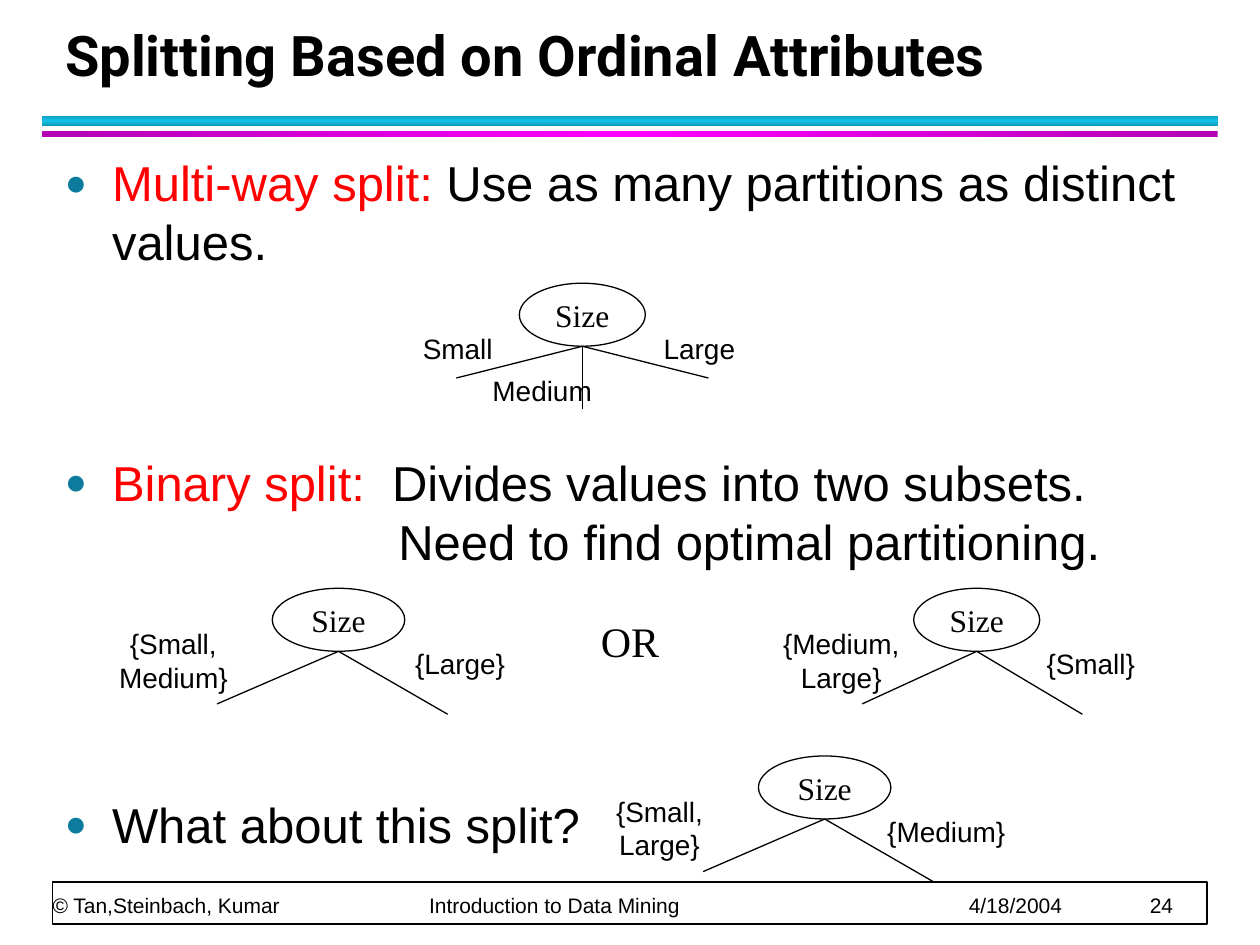
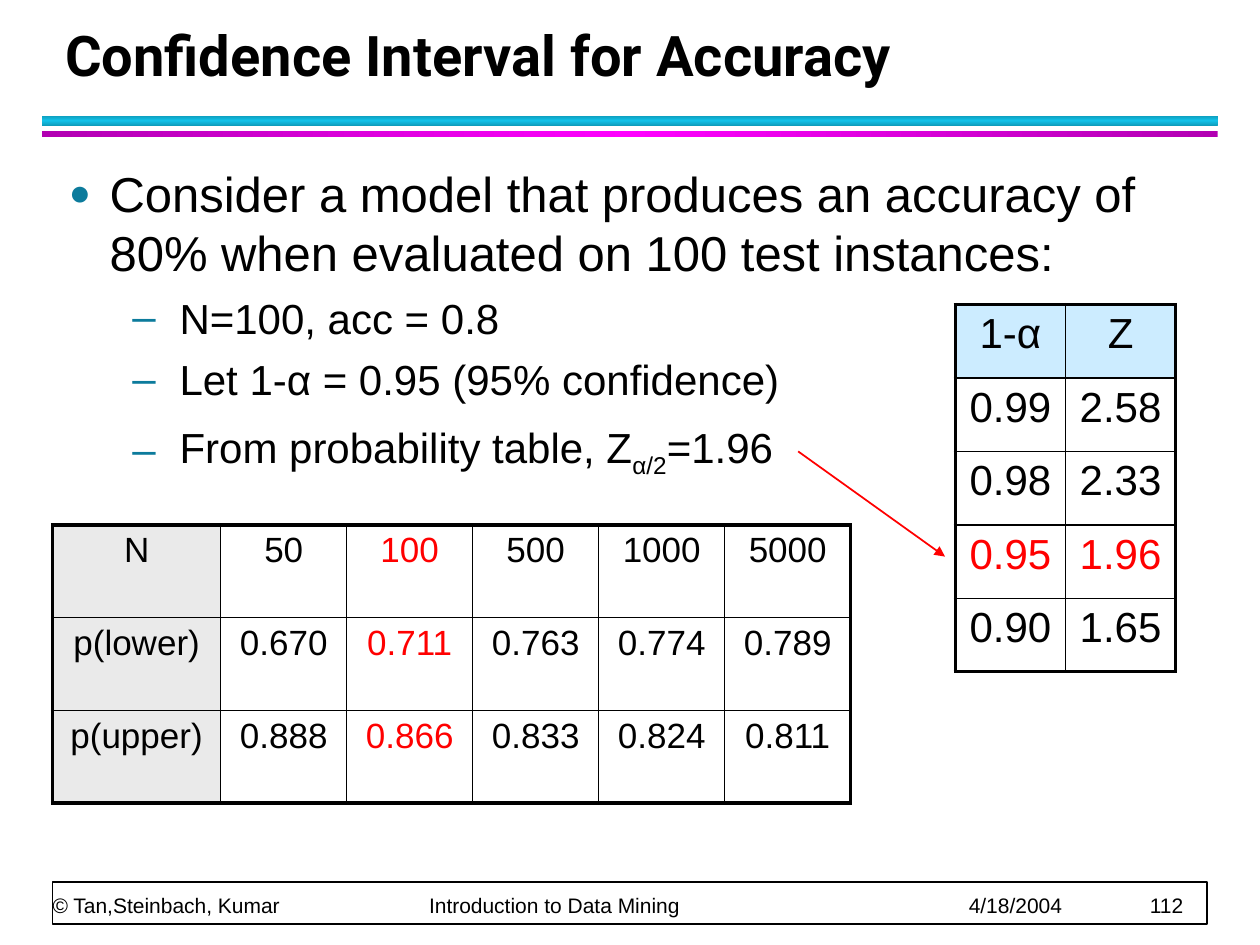
from copy import deepcopy
from dataclasses import dataclass

from pptx import Presentation
from pptx.dml.color import RGBColor as Rgb
from pptx.enum.shapes import MSO_CONNECTOR as Link, MSO_SHAPE as Preset
from pptx.enum.text import MSO_ANCHOR as Anchor, MSO_AUTO_SIZE as AutoSize, PP_ALIGN as Align
from pptx.oxml.ns import qn
from pptx.util import Cm, Pt
from lxml.etree import SubElement


@dataclass(frozen=True)
class Theme:
    ink: str = "000000"
    paper: str = "FFFFFF"
    accent: str = "FF0000"
    bullet: str = "0C7B9C"
    cyan: tuple = ("0E9BBA", "12C2E9", "0E9BBA")
    magenta: tuple = ("B200B2", "FF00FF", "B200B2")
    head_row: str = "CCECFF"
    head_column: str = "EAEAEA"
    sans: str = "Arial"
    serif: str = "Times New Roman"
    display: str = "Roboto"
    title: int = 32
    body: int = 28
    detail: int = 24
    grid: int = 20
    root: int = 18
    label: int = 16
    footer: int = 12
    hairline: float = 0.75
    rule: float = 1
    border: float = 2.25


THEME = Theme()
NO_INSETS = dict.fromkeys(("margin_left", "margin_top", "margin_right", "margin_bottom"), 0)

FOOTER_TABS = (7.59, 18.47, 22.12)
FOOTER_PARTS = ("© Tan,Steinbach, Kumar", "Introduction to Data Mining", "4/18/2004")

MULTI_WAY = ((-2.54, 0.64, -2.51, 0.05), (0, 1.27, -0.81, 0.89), (2.54, 0.64, 2.36, 0.05))
BINARY_WIDE = ((-2.45, 1.06, -3.33, 0.18), (2.2, 1.27, 2.45, 0.24))
BINARY_NARROW = ((-2.31, 1.06, -2.73, 0.18), (2.13, 1.27, 2.3, 0.24))

SIZE_TREES = (
    ((10.47, 5.71, 2.54), MULTI_WAY, ("Small", "Medium", "Large")),
    ((18.42, 11.86, 2.54), BINARY_NARROW, ("{Medium, Large}", "{Small}")),
    ((5.49, 11.86, 2.67), BINARY_WIDE, ("{Small, Medium}", "{Large}")),
    ((15.29, 15.24, 2.67), BINARY_WIDE, ("{Small, Large}", "{Medium}")),
)

Z_VALUES = (("1-α", "Z"), ("0.99", "2.58"), ("0.98", "2.33"), ("0.95", "1.96"), ("0.90", "1.65"))
BOUNDS = (
    ("N", "50", "100", "500", "1000", "5000"),
    ("p(lower)", "0.670", "0.711", "0.763", "0.774", "0.789"),
    ("p(upper)", "0.888", "0.866", "0.833", "0.824", "0.811"),
)


def apply(target, formats):
    for name, value in formats.items():
        setattr(target, name, value)


def cm(*lengths):
    return [Cm(length) for length in lengths]


def write(paragraph, words, size, colour=THEME.ink, face=THEME.sans, bold=False):
    run = paragraph.add_run()
    run.text = words
    apply(run.font, {"size": Pt(size), "name": face, "bold": bold})
    run.font.color.rgb = Rgb.from_string(colour)
    return run


def add_preset(slide, preset, box):
    shape = slide.shapes.add_shape(preset, *cm(*box))
    shape.shadow.inherit = False
    return shape


def add_outlined(slide, preset, box, width):
    shape = add_preset(slide, preset, box)
    shape.fill.solid()
    shape.fill.fore_color.rgb = Rgb.from_string(THEME.paper)
    shape.line.color.rgb = Rgb.from_string(THEME.ink)
    shape.line.width = Pt(width)
    return shape


def add_line(slide, start, end, colour, width, arrow=False):
    line = slide.shapes.add_connector(Link.STRAIGHT, *cm(*start, *end))
    line.line.color.rgb = Rgb.from_string(colour)
    line.line.width = Pt(width)
    if arrow:
        SubElement(line.line._get_or_add_ln(), qn("a:tailEnd"), type="triangle")
    SubElement(line._element.spPr, qn("a:effectLst"))


def add_centred(slide, centre, box_size, words, size, face):
    (x, y), (width, height) = centre, box_size
    caption = slide.shapes.add_textbox(*cm(x - width / 2, y - height / 2, width, height))
    apply(caption.text_frame, NO_INSETS | {"word_wrap": True, "vertical_anchor": Anchor.MIDDLE})
    paragraph = caption.text_frame.paragraphs[0]
    paragraph.alignment = Align.CENTER
    write(paragraph, words, size, face=face)


def add_band(slide, box, colours, angle):
    band = add_preset(slide, Preset.RECTANGLE, box)
    band.line.fill.background()
    band.fill.gradient()
    band.fill.gradient_angle = angle
    stops = band._element.spPr.find(".//" + qn("a:gsLst"))
    stops.append(deepcopy(stops[0]))
    for index, (stop, colour) in enumerate(zip(band.fill.gradient_stops, colours)):
        stop.color.rgb = Rgb.from_string(colour)
        stop.position = index / 2


def add_footer(slide, box, number):
    frame = add_outlined(slide, Preset.RECTANGLE, box, THEME.rule)
    apply(frame.text_frame, NO_INSETS | {"margin_bottom": Cm(0.13), "vertical_anchor": Anchor.BOTTOM})
    paragraph = frame.text_frame.paragraphs[0]
    apply(paragraph, {"alignment": Align.LEFT, "line_spacing": Pt(20)})
    tabs = SubElement(paragraph._p.get_or_add_pPr(), qn("a:tabLst"))
    for position in FOOTER_TABS:
        SubElement(tabs, qn("a:tab"), pos=str(Cm(position)), algn="l")
    write(paragraph, "\t".join((*FOOTER_PARTS, number)), THEME.footer)


def start_slide(deck, heading, number):
    slide = deck.slides.add_slide(deck.slide_layouts[5])
    title = slide.shapes.title
    apply(title, dict(zip(("left", "top", "width", "height"), cm(1.06, 0.42, 23.02, 1.48))))
    apply(title.text_frame, {"vertical_anchor": Anchor.BOTTOM, "auto_size": AutoSize.NONE})
    paragraph = title.text_frame.paragraphs[0]
    apply(paragraph, {"alignment": Align.LEFT, "line_spacing": Pt(36)})
    write(paragraph, heading, THEME.title, face=THEME.display, bold=True)
    add_band(slide, (0.85, 2.33, 23.7, 0.21), THEME.cyan, 90)
    add_band(slide, (0.85, 2.65, 23.7, 0.11), THEME.magenta, 0)
    add_footer(slide, (1.06, 17.78, 23.28, 0.85), number)
    return slide


def add_body(slide, box):
    body = slide.shapes.add_textbox(*cm(*box)).text_frame
    body.word_wrap = True
    return body


def add_item(body, parts, size, margin, hang=0.0, mark=None, scale=100, before=None, after=4):
    paragraph = body.paragraphs[0]
    if paragraph.runs:
        paragraph = body.add_paragraph()
    before = size / 10 if before is None else before
    apply(paragraph, {"space_before": Pt(before), "space_after": Pt(after)})
    props = paragraph._p.get_or_add_pPr()
    props.set("marL", str(Cm(margin)))
    props.set("indent", str(-Cm(hang)))
    if mark:
        SubElement(SubElement(props, qn("a:buClr")), qn("a:srgbClr"), val=THEME.bullet)
        SubElement(props, qn("a:buSzPct"), val=str(scale * 1000))
        SubElement(props, qn("a:buFont"), typeface=THEME.sans)
        SubElement(props, qn("a:buChar"), char=mark)
    return [write(paragraph, words, size, colour) for words, colour in parts]


def add_split_tree(slide, root_box, branches, labels):
    left, top, width = root_box
    height = 1.27
    fork_x, fork_y = left + width / 2, top + height
    root = add_outlined(slide, Preset.OVAL, (left, top, width, height), THEME.hairline)
    apply(root.text_frame, {"word_wrap": False, "vertical_anchor": Anchor.MIDDLE})
    root.text_frame.paragraphs[0].alignment = Align.CENTER
    write(root.text_frame.paragraphs[0], "Size", THEME.root, face=THEME.serif)
    for (tip_x, tip_y, label_x, label_y), label in zip(branches, labels):
        add_line(slide, (fork_x, fork_y), (fork_x + tip_x, fork_y + tip_y), THEME.ink, THEME.hairline)
        add_centred(slide, (fork_x + label_x, fork_y + label_y), (2.8, 1.6), label, THEME.label, THEME.sans)


def set_borders(cell, widths):
    props = cell._tc.get_or_add_tcPr()
    for index, (side, width) in enumerate(widths.items()):
        edge = props.makeelement(qn("a:" + side), {"w": str(Pt(width))})
        SubElement(SubElement(edge, qn("a:solidFill")), qn("a:srgbClr"), val=THEME.ink)
        props.insert(index, edge)


def add_grid(slide, origin, widths, row_height, rows, size, head, head_fill, is_marked):
    box = (*origin, sum(widths), row_height * len(rows))
    grid = slide.shapes.add_table(len(rows), len(widths), *cm(*box)).table
    apply(grid, {"first_row": False, "horz_banding": False})
    for column, width in zip(grid.columns, widths):
        column.width = Cm(width)
    last_row, last_column = len(rows) - 1, len(widths) - 1
    for r, values in enumerate(rows):
        grid.rows[r].height = Cm(row_height)
        for c, value in enumerate(values):
            cell = grid.cell(r, c)
            apply(cell, {"margin_left": Cm(0.1), "margin_right": Cm(0.1)})
            if head(r, c):
                cell.fill.solid()
                cell.fill.fore_color.rgb = Rgb.from_string(head_fill)
            else:
                cell.fill.background()
            outer = {"lnL": c == 0, "lnR": c == last_column, "lnT": r == 0, "lnB": r == last_row}
            set_borders(cell, {side: THEME.border if edge else THEME.rule for side, edge in outer.items()})
            paragraph = cell.text_frame.paragraphs[0]
            apply(paragraph, {"alignment": Align.CENTER, "space_before": Pt(size / 10), "space_after": Pt(4)})
            write(paragraph, value, size, THEME.accent if is_marked(r, c) else THEME.ink)


def build_ordinal_splits(deck):
    slide = start_slide(deck, "Splitting Based on Ordinal Attributes", "24")
    body = add_body(slide, (1.06, 2.96, 23.28, 14.6))
    dot = {"size": THEME.body, "margin": 0.95, "hang": 0.95, "mark": "●", "scale": 75}
    add_item(body, (("Multi-way split:", THEME.accent),
                    (" Use as many partitions as distinct values.", THEME.ink)), **dot)
    add_item(body, (("Binary split:", THEME.accent),
                    ("  Divides values into two subsets.", THEME.ink)), **dot, before=100, after=0)
    add_item(body, (("Need to find optimal partitioning.", THEME.ink),), THEME.body, 6.72, before=0)
    add_item(body, (("What about this split?", THEME.ink),), **dot, before=124)
    for root_box, branches, labels in SIZE_TREES:
        add_split_tree(slide, root_box, branches, labels)
    add_centred(slide, (12.7, 12.91), (1.68, 1.27), "OR", THEME.detail, THEME.serif)


def build_confidence_interval(deck):
    slide = start_slide(deck, "Confidence Interval for Accuracy", "112")
    body = add_body(slide, (1.14, 3.17, 23.11, 14.4))
    dash = {"size": THEME.detail, "margin": 2.23, "hang": 0.95, "mark": "–"}
    add_item(body, (("Consider a model that produces an accuracy of 80% when evaluated "
                     "on 100 test instances:", THEME.ink),), THEME.body, 0.82, 0.82, "●", 75)
    for detail in ("N=100, acc = 0.8", "Let 1-α = 0.95 (95% confidence)"):
        add_item(body, ((detail, THEME.ink),), **dash)
    z_parts = ("From probability table, Z", "α/2", "=1.96")
    subscript = add_item(body, [(part, THEME.ink) for part in z_parts], **dash, before=6)[1]
    subscript.font._element.set("baseline", "-25000")
    add_grid(slide, (19.26, 6.14), (2.22, 2.22), 1.48, Z_VALUES, THEME.detail,
             lambda r, c: r == 0, THEME.head_row, lambda r, c: r == 3)
    add_line(slide, (16.09, 9.1), (19.05, 11.22), THEME.accent, THEME.rule, arrow=True)
    add_grid(slide, (1.06, 10.58), (3.39, *[2.54] * 5), 1.87, BOUNDS, THEME.grid,
             lambda r, c: c == 0, THEME.head_column, lambda r, c: c == 2)


def main():
    deck = Presentation()
    apply(deck, {"slide_width": Cm(25.4), "slide_height": Cm(19.05)})
    build_ordinal_splits(deck)
    build_confidence_interval(deck)
    deck.save("out.pptx")


if __name__ == "__main__":
    main()
